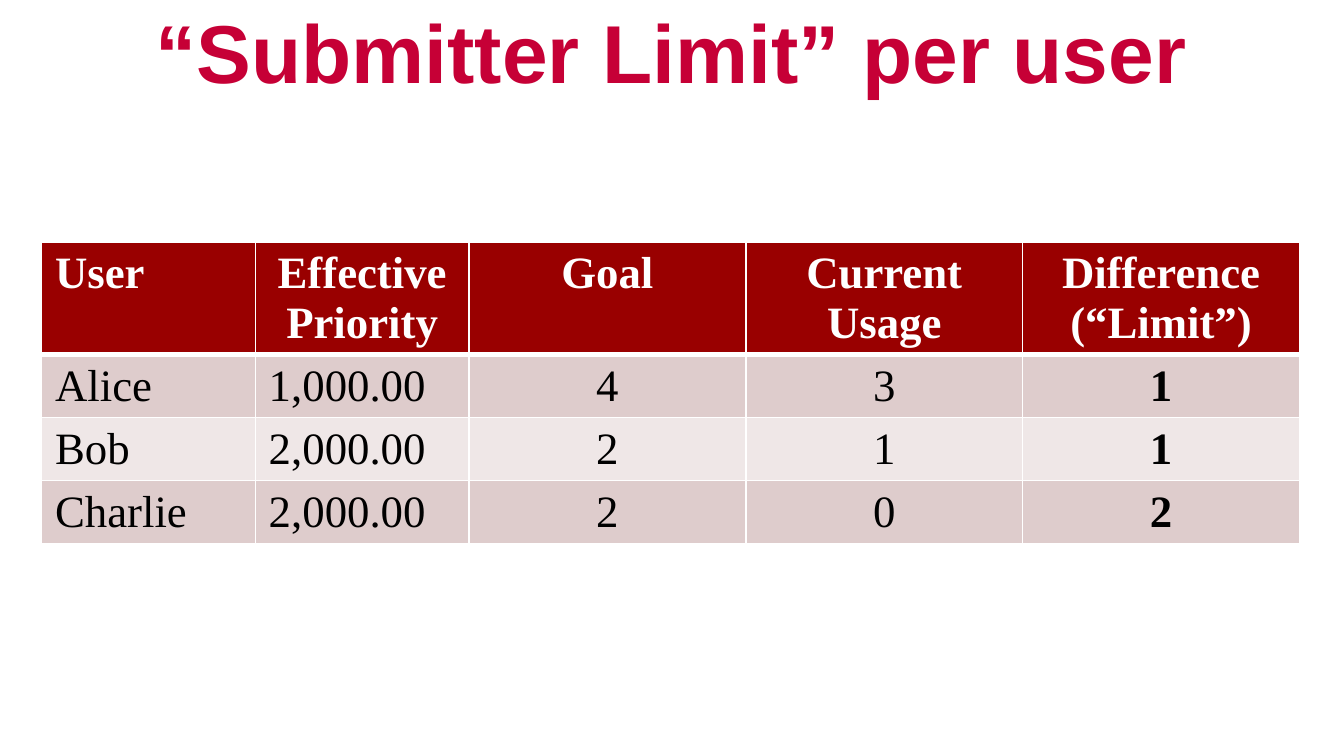
from pptx import Presentation
from pptx.dml.color import RGBColor
from pptx.enum.text import MSO_ANCHOR as Anchor, MSO_AUTO_SIZE as AutoSize, PP_ALIGN as Align
from pptx.oxml import parse_xml
from pptx.oxml.ns import nsdecls
from pptx.util import Inches, Pt

WHITE, BLACK, CRIMSON, DARK_RED = "FFFFFF", "000000", "C60036", "990000"
BANDS = ["DECCCC", "EFE7E7"]
COLUMN_WIDTHS = [1.59, 1.59, 2.06, 2.06, 2.06]
ROW_HEIGHTS = [0.83, 0.47, 0.47, 0.47]
ROWS = [
    ["User", "Effective\nPriority", "Goal", "Current\nUsage", "Difference\n(“Limit”)"],
    ["Alice", "1,000.00", "4", "3", "1"],
    ["Bob", "2,000.00", "2", "1", "1"],
    ["Charlie", "2,000.00", "2", "0", "2"],
]


def color(value):
    return RGBColor.from_string(value)


def format_text(text_frame, align, font_color, **font_format):
    for paragraph in text_frame.paragraphs:
        paragraph.alignment = align
        for run in paragraph.runs:
            run.font.color.rgb = color(font_color)
            for name, value in font_format.items():
                setattr(run.font, name, value)


def add_title(slide, text):
    title = slide.shapes.title
    box = {"left": 0, "top": 0, "width": Inches(10), "height": Inches(0.75)}
    for name, value in box.items():
        setattr(title, name, value)
    frame = title.text_frame
    frame.text = text
    frame_format = {"word_wrap": True, "auto_size": AutoSize.NONE, "vertical_anchor": Anchor.MIDDLE}
    for name, value in frame_format.items():
        setattr(frame, name, value)
    format_text(frame, Align.CENTER, CRIMSON, name="Arial", size=Pt(44), bold=True)


def set_borders(cell, widths):
    properties = cell._tc.get_or_add_tcPr()
    for index, (side, width) in enumerate(widths.items()):
        properties.insert(index, parse_xml(
            f'<a:ln{side} {nsdecls("a")} w="{Pt(width)}"><a:solidFill>'
            f'<a:srgbClr val="{WHITE}"/></a:solidFill></a:ln{side}>'))


def fill_cell(cell, text, row, column):
    header = row == 0
    cell.text = text
    cell.fill.solid()
    cell.fill.fore_color.rgb = color(DARK_RED if header else BANDS[(row - 1) % 2])
    centered = column > 1 or (header and column == 1)
    format_text(cell.text_frame, Align.CENTER if centered else Align.LEFT,
                WHITE if header else BLACK, name="Times New Roman", size=Pt(24),
                bold=header or column == len(COLUMN_WIDTHS) - 1)
    set_borders(cell, {"L": 1, "R": 1, "T": 3 if row == 1 else 1, "B": 3 if header else 1})


def add_limit_table(slide):
    table = slide.shapes.add_table(
        len(ROWS), len(COLUMN_WIDTHS), Inches(0.31), Inches(1.8),
        Inches(sum(COLUMN_WIDTHS)), Inches(sum(ROW_HEIGHTS))).table
    for column, width in zip(table.columns, COLUMN_WIDTHS):
        column.width = Inches(width)
    for row, height in zip(table.rows, ROW_HEIGHTS):
        row.height = Inches(height)
    for row, values in enumerate(ROWS):
        for column, text in enumerate(values):
            fill_cell(table.cell(row, column), text, row, column)


def main():
    presentation = Presentation()
    presentation.slide_width = Inches(10)
    presentation.slide_height = Inches(10 * 9 / 16)
    slide = presentation.slides.add_slide(presentation.slide_layouts[5])
    add_title(slide, "“Submitter Limit” per user")
    add_limit_table(slide)
    presentation.save("out.pptx")


if __name__ == "__main__":
    main()
